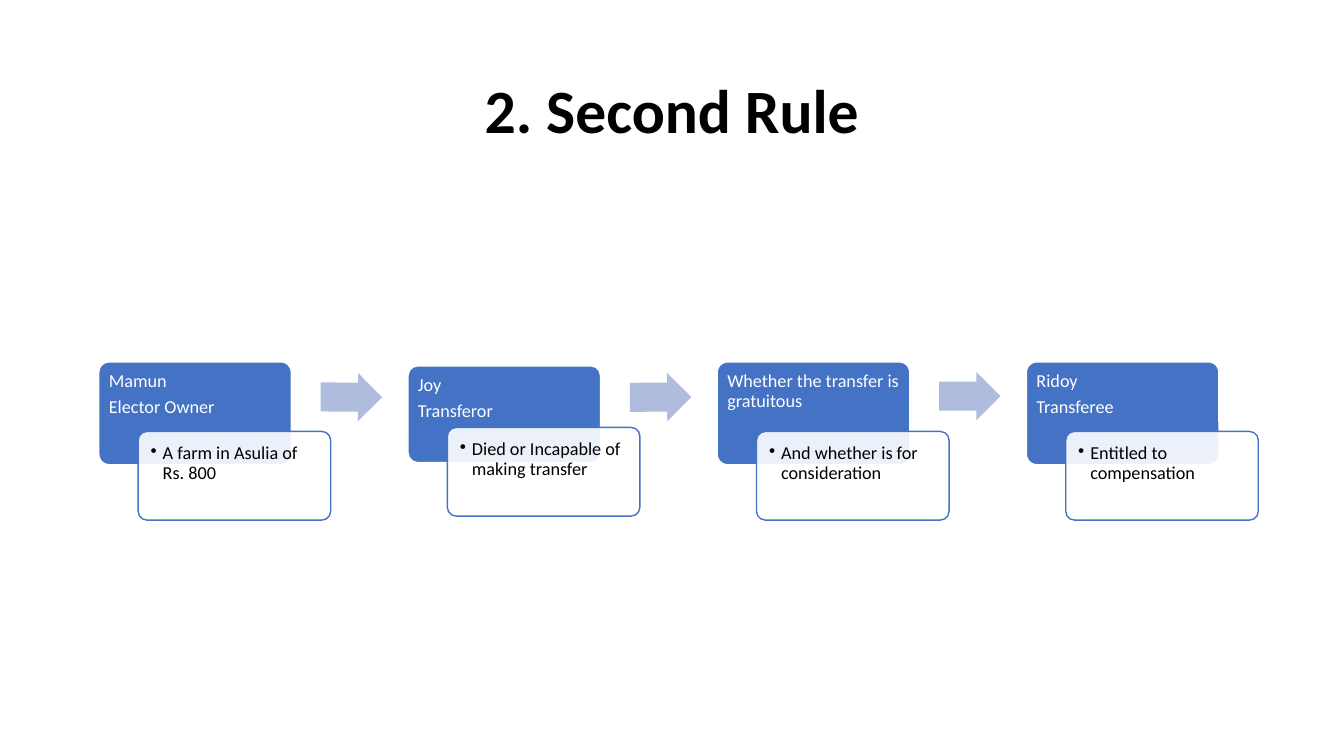
import math
from pptx import Presentation, util as u
from pptx.dml.color import RGBColor
from pptx.enum import shapes, text
from pptx.oxml.ns import qn
from lxml import etree

TITLE = "2. Second Rule"
STEPS = [
    {"heading": "Mamun\nElector Owner", "detail": "A farm in Asulia of Rs. 800",
     "heading_height": 1.02, "stack_height": 1.57},
    {"heading": "Joy\nTransferor", "detail": "Died or Incapable of making transfer",
     "heading_height": 0.96, "stack_height": 1.49},
    {"heading": "Whether the transfer is gratuitous", "detail": "And whether is for consideration",
     "heading_height": 1.02, "stack_height": 1.57},
    {"heading": "Ridoy\nTransferee", "detail": "Entitled to compensation",
     "heading_height": 1.02, "stack_height": 1.57},
]

FONT = "Calibri"
BLUE = RGBColor(0x44, 0x72, 0xC4)
PALE_BLUE = RGBColor(0xB0, 0xBC, 0xDE)
WHITE = RGBColor(0xFF, 0xFF, 0xFF)
BLACK = RGBColor(0, 0, 0)

SLIDE_WIDTH, SLIDE_HEIGHT = 13.33, 7.5
MARGIN = 0.92
ROW_LEFT, ROW_MIDDLE = 0.98, 4.375
COLUMN_STEP = 9.2 / 3
CARD_WIDTH, DETAIL_HEIGHT, DETAIL_SHIFT = 1.91, 0.88, 0.39
ARROW_WIDTH, ARROW_HEIGHT, ARROW_SHIFT = 0.61, 0.48, 2.2
INSET = 0.1


def inches(*lengths):
    return [u.Inches(length) for length in lengths]


def add_filled_shape(slide, preset, box, fill, line, adjustments):
    shape = slide.shapes.add_shape(preset, *inches(*box))
    shape.shadow.inherit = False
    shape.fill.solid()
    shape.fill.fore_color.rgb = fill
    if line is None:
        shape.line.fill.background()
    else:
        shape.line.color.rgb = line
        shape.line.width = u.Pt(1)
    for index, value in enumerate(adjustments):
        shape.adjustments[index] = value
    return shape


def write(shape, wording, size, color, space_after=0, bold=False, bullet=False,
          align=text.PP_ALIGN.LEFT, anchor=text.MSO_ANCHOR.TOP):
    frame = shape.text_frame
    frame.word_wrap = True
    frame.vertical_anchor = anchor
    frame.margin_left = frame.margin_right = frame.margin_top = u.Inches(INSET)
    frame.text = wording
    for paragraph in frame.paragraphs:
        paragraph.alignment = align
        paragraph.line_spacing = 0.9
        paragraph.space_after = u.Pt(space_after)
        if bullet:
            properties = paragraph._p.get_or_add_pPr()
            properties.set("marL", str(u.Inches(0.12)))
            properties.set("indent", str(-u.Inches(0.12)))
            etree.SubElement(properties, qn("a:buChar")).set("char", "•")
        for run in paragraph.runs:
            run.font.name = FONT
            run.font.size = u.Pt(size)
            run.font.bold = bold
            run.font.color.rgb = color


def set_opacity(shape, percent):
    color = shape._element.spPr.find(qn("a:solidFill")).find(qn("a:srgbClr"))
    etree.SubElement(color, qn("a:alpha")).set("val", str(percent * 1000))


def add_step(slide, left, step):
    top = ROW_MIDDLE - step["stack_height"] / 2
    rounded = shapes.MSO_SHAPE.ROUNDED_RECTANGLE
    heading = add_filled_shape(slide, rounded, (left, top, CARD_WIDTH, step["heading_height"]),
                               BLUE, WHITE, [0.1])
    write(heading, step["heading"], 13, WHITE, space_after=4.5)
    heading.text_frame.margin_left = heading.text_frame.margin_top = u.Inches(0.07)
    heading.text_frame.margin_right = u.Inches(0.07)
    detail_top = top + step["stack_height"] - DETAIL_HEIGHT
    detail = add_filled_shape(slide, rounded,
                              (left + DETAIL_SHIFT, detail_top, CARD_WIDTH, DETAIL_HEIGHT),
                              WHITE, BLUE, [0.1])
    set_opacity(detail, 90)
    write(detail, step["detail"], 13, BLACK, space_after=2, bullet=True)


def label_middle(step):
    return ROW_MIDDLE - step["stack_height"] / 2 + step["heading_height"] / 3


def add_arrow(slide, left, step, following):
    start, end = label_middle(step), label_middle(following)
    top = (start + end - ARROW_HEIGHT) / 2
    arrow = add_filled_shape(slide, shapes.MSO_SHAPE.RIGHT_ARROW,
                             (left + ARROW_SHIFT, top, ARROW_WIDTH, ARROW_HEIGHT),
                             PALE_BLUE, None, [0.6, 0.5])
    arrow.rotation = math.degrees(math.atan2(end - start, COLUMN_STEP))


def main():
    presentation = Presentation()
    presentation.slide_width, presentation.slide_height = inches(SLIDE_WIDTH, SLIDE_HEIGHT)
    slide = presentation.slides.add_slide(presentation.slide_layouts[6])
    title = slide.shapes.add_textbox(*inches(MARGIN, 0.4, SLIDE_WIDTH - 2 * MARGIN, 1.45))
    write(title, TITLE, 44, BLACK, bold=True,
          align=text.PP_ALIGN.CENTER, anchor=text.MSO_ANCHOR.MIDDLE)
    title.text_frame.margin_top = title.text_frame.margin_bottom
    for column, step in enumerate(STEPS):
        left = ROW_LEFT + column * COLUMN_STEP
        add_step(slide, left, step)
        if column + 1 < len(STEPS):
            add_arrow(slide, left, step, STEPS[column + 1])
    presentation.save("out.pptx")


if __name__ == "__main__":
    main()
